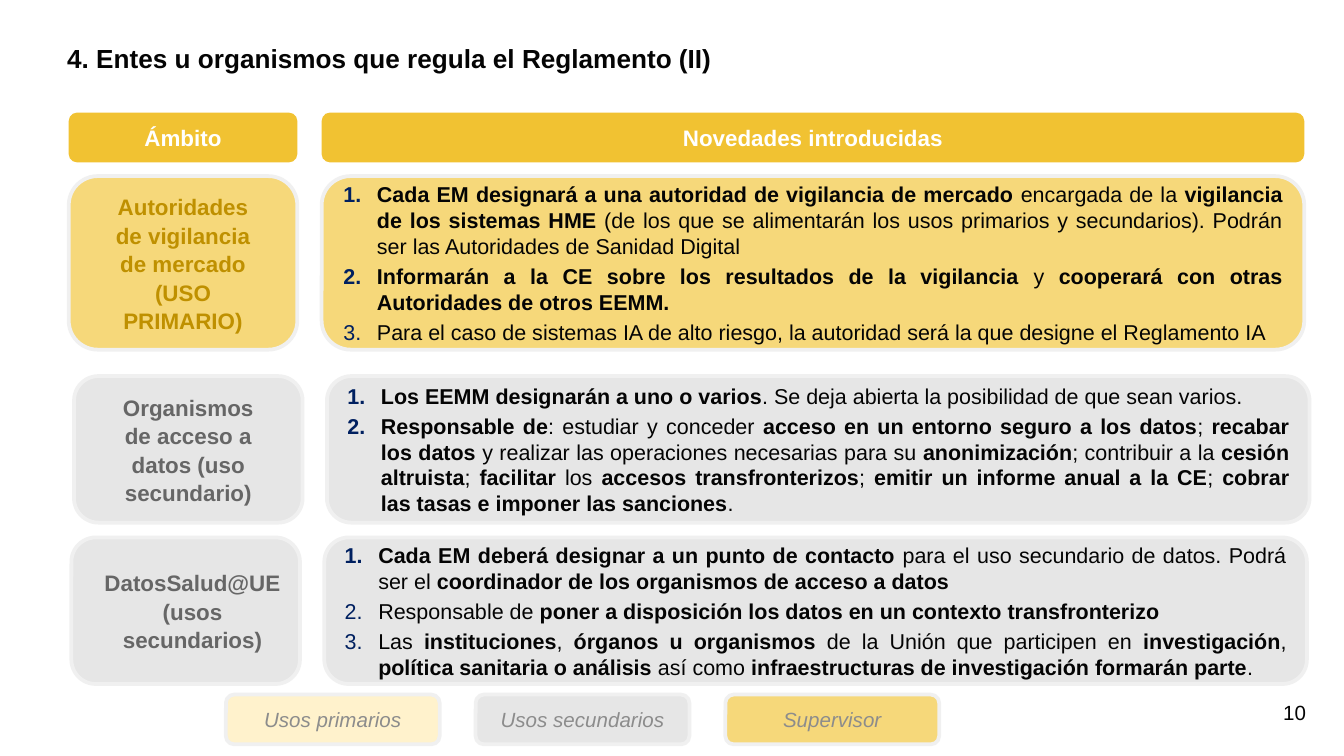
from lxml import etree
from pptx import Presentation
from pptx.dml.color import RGBColor
from pptx.enum.shapes import MSO_SHAPE
from pptx.enum.text import MSO_ANCHOR, PP_ALIGN
from pptx.oxml.ns import qn
from pptx.util import Cm, Pt

ROUNDED = MSO_SHAPE.ROUNDED_RECTANGLE
MIDDLE, TOP = MSO_ANCHOR.MIDDLE, MSO_ANCHOR.TOP
LEFT, CENTER, JUSTIFY = PP_ALIGN.LEFT, PP_ALIGN.CENTER, PP_ALIGN.JUSTIFY

BLACK = RGBColor(0x04, 0x04, 0x04)
WHITE = RGBColor(0xFF, 0xFF, 0xFF)
GOLD = RGBColor(0xF1, 0xC2, 0x32)
AMBER = RGBColor(0xF6, 0xD8, 0x7A)
CREAM = RGBColor(0xFF, 0xF2, 0xCC)
GREY = RGBColor(0xE6, 0xE6, 0xE6)
BORDER = RGBColor(0xF0, 0xF0, 0xF0)
DARK_GOLD = RGBColor(0xBF, 0x90, 0x00)
DARK_GREY = RGBColor(0x66, 0x66, 0x66)
LEGEND_GREY = RGBColor(0x8C, 0x8C, 0x8C)
NUMBER_BLUE = "002060"

# Text between ** marks is bold.
TITLE = "**4. Entes u organismos que regula el Reglamento (II)**"
PAGE_NUMBER = "10"
HEADERS = ["**Ámbito**", "**Novedades introducidas**"]
ROWS = [
    {
        "left": 1.3, "top": 3.33, "height": 3.28, "fill": AMBER,
        "scope": "**Autoridades de vigilancia de mercado (USO PRIMARIO)**",
        "scope_color": DARK_GOLD, "scope_width": 3.4, "scope_shift": 0,
        "news": [
            "**Cada EM designará a una autoridad de vigilancia de mercado** encargada de la "
            "**vigilancia de los sistemas HME** (de los que se alimentarán los usos primarios "
            "y secundarios). Podrán ser las Autoridades de Sanidad Digital",
            "**Informarán a la CE sobre los resultados de la vigilancia **y "
            "**cooperará con otras Autoridades de otros EEMM.**",
            "Para el caso de sistemas IA de alto riesgo, la autoridad será la que designe "
            "el Reglamento IA",
        ],
    },
    {
        "left": 1.4, "top": 7.11, "height": 2.77, "fill": GREY,
        "scope": "**Organismos de acceso a datos (uso secundario)**",
        "scope_color": DARK_GREY, "scope_width": 3.4, "scope_shift": 0,
        "news": [
            "**Los EEMM designarán a uno o varios**. Se deja abierta la posibilidad de que "
            "sean varios.",
            "**Responsable de**: estudiar y conceder **acceso en un entorno seguro a los "
            "datos**; **recabar los datos **y realizar las operaciones necesarias para su "
            "**anonimización**; contribuir a la **cesión altruista**; **facilitar** los "
            "**accesos transfronterizos**; **emitir un informe anual a la CE**; **cobrar las "
            "tasas e imponer las sanciones**.",
        ],
    },
    {
        "left": 1.35, "top": 10.16, "height": 2.77, "fill": GREY,
        "scope": "**DatosSalud@UE\n(usos secundarios)**",
        "scope_color": DARK_GREY, "scope_width": 4.06, "scope_shift": 0.13,
        "news": [
            "**Cada EM deberá designar a un punto de contacto **para el uso secundario de "
            "datos. Podrá ser el **coordinador de los organismos de acceso a datos**",
            "Responsable de **poner a disposición los datos en un contexto transfronterizo**",
            "Las **instituciones**, **órganos u organismos** de la Unión que participen en "
            "**investigación**, **política sanitaria o análisis **así como "
            "**infraestructuras de investigación formarán parte**.",
        ],
    },
]
LEGEND = [("Usos primarios", CREAM), ("Usos secundarios", GREY), ("Supervisor", AMBER)]

COLUMNS = [(0, 4.32), (4.78, 18.57)]  # offset from the row's left, width
HEADER_TOP, BAR_HEIGHT = 2.13, 0.94
SCOPE_TEXT_HEIGHT = 1.5
LEGEND_LEFT, LEGEND_TOP, LEGEND_WIDTH, LEGEND_STEP = 4.27, 13.13, 4.04, 4.72


def number_paragraph(paragraph):
    properties = paragraph._p.get_or_add_pPr()
    properties.set("marL", str(Cm(0.635)))
    properties.set("indent", str(-Cm(0.635)))
    color = etree.SubElement(properties, qn("a:buClr"))
    etree.SubElement(color, qn("a:srgbClr"), val=NUMBER_BLUE)
    etree.SubElement(properties, qn("a:buAutoNum"), type="arabicPeriod")


def write(shape, paragraphs, size, color, align=LEFT, anchor=MIDDLE, margins=(0.25, 0.18),
          italic=False, numbered=False, line_spacing=None):
    frame = shape.text_frame
    frame.word_wrap = True
    frame.vertical_anchor = anchor
    frame.margin_left = frame.margin_right = Cm(margins[0])
    frame.margin_top = frame.margin_bottom = Cm(margins[1])
    for index, text in enumerate(paragraphs):
        paragraph = frame.add_paragraph() if index else frame.paragraphs[0]
        if numbered:
            number_paragraph(paragraph)
        paragraph.alignment = align
        if line_spacing:
            paragraph.line_spacing = line_spacing
        if index:
            paragraph.space_before = Pt(size * 0.2)
        for part, words in enumerate(text.split("**")):
            for line, content in enumerate(words.split("\n")):
                if line:
                    paragraph.add_line_break()
                if not content:
                    continue
                run = paragraph.add_run()
                run.text = content
                run.font.name = "Arial"
                run.font.size = Pt(size)
                run.font.bold = part % 2 == 1
                run.font.italic = italic
                run.font.color.rgb = color


def add_panel(slide, left, top, width, height, fill, border=BORDER):
    panel = slide.shapes.add_shape(ROUNDED, Cm(left), Cm(top), Cm(width), Cm(height))
    panel.shadow.inherit = False
    panel.fill.solid()
    panel.fill.fore_color.rgb = fill
    if border is None:
        panel.line.fill.background()
    else:
        panel.line.color.rgb = border
        panel.line.width = Pt(2)
    return panel


def add_text(slide, left, top, width, height):
    return slide.shapes.add_textbox(Cm(left), Cm(top), Cm(width), Cm(height))


def add_row(slide, row):
    (scope_offset, scope_width), (news_offset, news_width) = COLUMNS
    left, top, height = row["left"], row["top"], row["height"]
    news = add_panel(slide, left + news_offset, top, news_width, height, row["fill"])
    write(news, row["news"], 11.5, BLACK, JUSTIFY, numbered=True)

    add_panel(slide, left + scope_offset, top, scope_width, height, row["fill"])
    text_left = left + (scope_width - row["scope_width"]) / 2 + row["scope_shift"]
    text_top = top + (height - SCOPE_TEXT_HEIGHT) / 2
    scope = add_text(slide, text_left, text_top, row["scope_width"], SCOPE_TEXT_HEIGHT)
    write(scope, [row["scope"]], 12, row["scope_color"], CENTER,
          margins=(0.25, 0.25), line_spacing=1.06)


def main():
    presentation = Presentation()
    presentation.slide_width, presentation.slide_height = Cm(25.4), Cm(14.29)
    slide = presentation.slides.add_slide(presentation.slide_layouts[6])

    title = add_text(slide, 1.27, 0.81, 23.42, 0.94)
    write(title, [TITLE], 14, BLACK, anchor=TOP, margins=(0, 0))
    page_number = add_text(slide, 24, 13.11, 1.47, 1.12)
    write(page_number, [PAGE_NUMBER], 11, BLACK, anchor=TOP, margins=(0.25, 0.13))

    for header, (offset, width) in zip(HEADERS, COLUMNS):
        bar = add_panel(slide, ROWS[0]["left"] + offset, HEADER_TOP, width, BAR_HEIGHT,
                        GOLD, border=None)
        write(bar, [header], 12, WHITE, CENTER)

    for row in ROWS:
        add_row(slide, row)

    for index, (use, fill) in enumerate(LEGEND):
        key = add_panel(slide, LEGEND_LEFT + index * LEGEND_STEP, LEGEND_TOP,
                        LEGEND_WIDTH, BAR_HEIGHT, fill)
        write(key, [use], 11, LEGEND_GREY, CENTER, italic=True)

    presentation.save("out.pptx")


if __name__ == "__main__":
    main()
